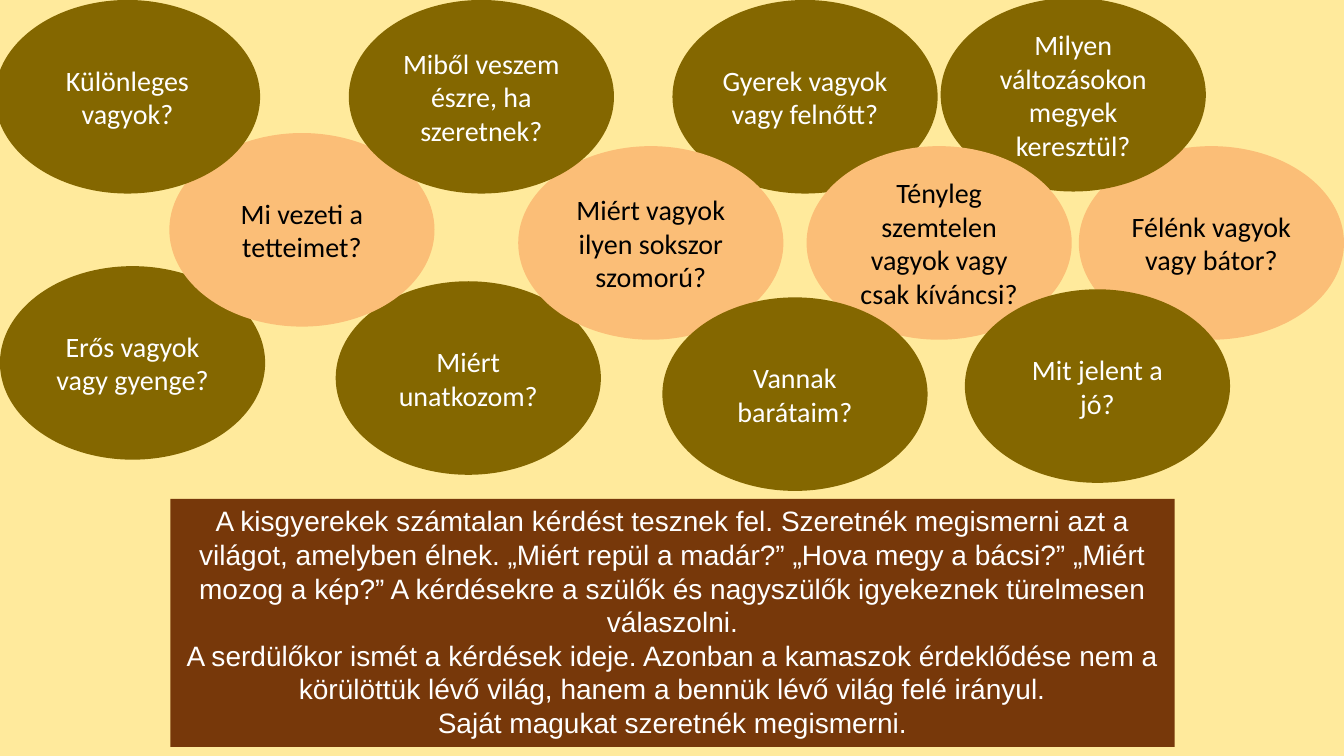
from pptx import Presentation
from pptx.dml.color import RGBColor
from pptx.enum.shapes import MSO_SHAPE
from pptx.enum.text import MSO_ANCHOR, PP_ALIGN
from pptx.util import Inches, Pt

OVAL = MSO_SHAPE.OVAL
MIDDLE = MSO_ANCHOR.MIDDLE
CENTER = PP_ALIGN.CENTER

SAND, OLIVE, PEACH, BROWN = "FFEA9C", "846700", "FBBE77", "77380A"
WHITE, BLACK = "FFFFFF", "000000"


def paint(fill, color):
    fill.solid()
    fill.fore_color.rgb = RGBColor.from_string(color)


class Board:
    size = Pt(20)
    wide, high = Inches(2.63), Inches(1.92)

    def __init__(self, slide):
        self.slide = slide
        paint(slide.background.fill, SAND)

    def label(self, frame, lines, font, color):
        frame.word_wrap = True
        for i, line in enumerate(lines):
            para = frame.add_paragraph() if i else frame.paragraphs[0]
            para.text = line
            para.alignment = CENTER
            para.font.name = font
            para.font.size = self.size
            paint(para.font.fill, color)

    def bubble(self, left, top, text, fill, ink):
        oval = self.slide.shapes.add_shape(
            OVAL, Inches(left), Inches(top), self.wide, self.high)
        oval.shadow.inherit = False
        oval.line.fill.background()
        paint(oval.fill, fill)
        oval.text_frame.vertical_anchor = MIDDLE
        self.label(oval.text_frame, [text], "Calibri", ink)

    def panel(self, left, top, width, height, lines):
        box = self.slide.shapes.add_textbox(
            Inches(left), Inches(top), Inches(width), Inches(height))
        paint(box.fill, BROWN)
        self.label(box.text_frame, lines, "Arial", WHITE)


# Questions from back to front
DARK, LIGHT = (OLIVE, WHITE), (PEACH, BLACK)
ASKED = [
    (6.67, 0, "Gyerek vagyok vagy felnőtt?", DARK),
    (0, 2.64, "Erős vagyok vagy gyenge?", DARK),
    (10.7, 1.45, "Félénk vagyok vagy bátor?", LIGHT),
    (9.33, -0.02, "Milyen változásokon megyek keresztül?", DARK),
    (3.33, 2.79, "Miért unatkozom?", DARK),
    (1.68, 1.32, "Mi vezeti a tetteimet?", LIGHT),
    (5.14, 1.45, "Miért vagyok ilyen sokszor szomorú?", LIGHT),
    (8, 1.45, "Tényleg szemtelen vagyok vagy csak kíváncsi?", LIGHT),
    (3.46, 0, "Miből veszem észre, ha szeretnek?", DARK),
    (-0.05, 0, "Különleges vagyok?", DARK),
    (9.57, 2.87, "Mit jelent a jó?", DARK),
    (6.57, 2.95, "Vannak barátaim?", DARK),
]

STORY = [
    "A kisgyerekek számtalan kérdést tesznek fel. Szeretnék megismerni azt a "
    "világot, amelyben élnek. „Miért repül a madár?” „Hova megy a bácsi?” "
    "„Miért mozog a kép?” A kérdésekre a szülők és nagyszülők igyekeznek "
    "türelmesen válaszolni.",
    "A serdülőkor ismét a kérdések ideje. Azonban a kamaszok érdeklődése nem a "
    "körülöttük lévő világ, hanem a bennük lévő világ felé irányul.",
    "Saját magukat szeretnék megismerni.",
]


def main():
    deck = Presentation()
    deck.slide_width, deck.slide_height = Inches(13.33), Inches(7.5)
    board = Board(deck.slides.add_slide(deck.slide_layouts[6]))

    # Explanation at the bottom
    board.panel(1.69, 4.95, 9.96, 2.46, STORY)

    # Cloud of questions
    for left, top, text, (fill, ink) in ASKED:
        board.bubble(left, top, text, fill, ink)

    deck.save("out.pptx")


if __name__ == "__main__":
    main()
